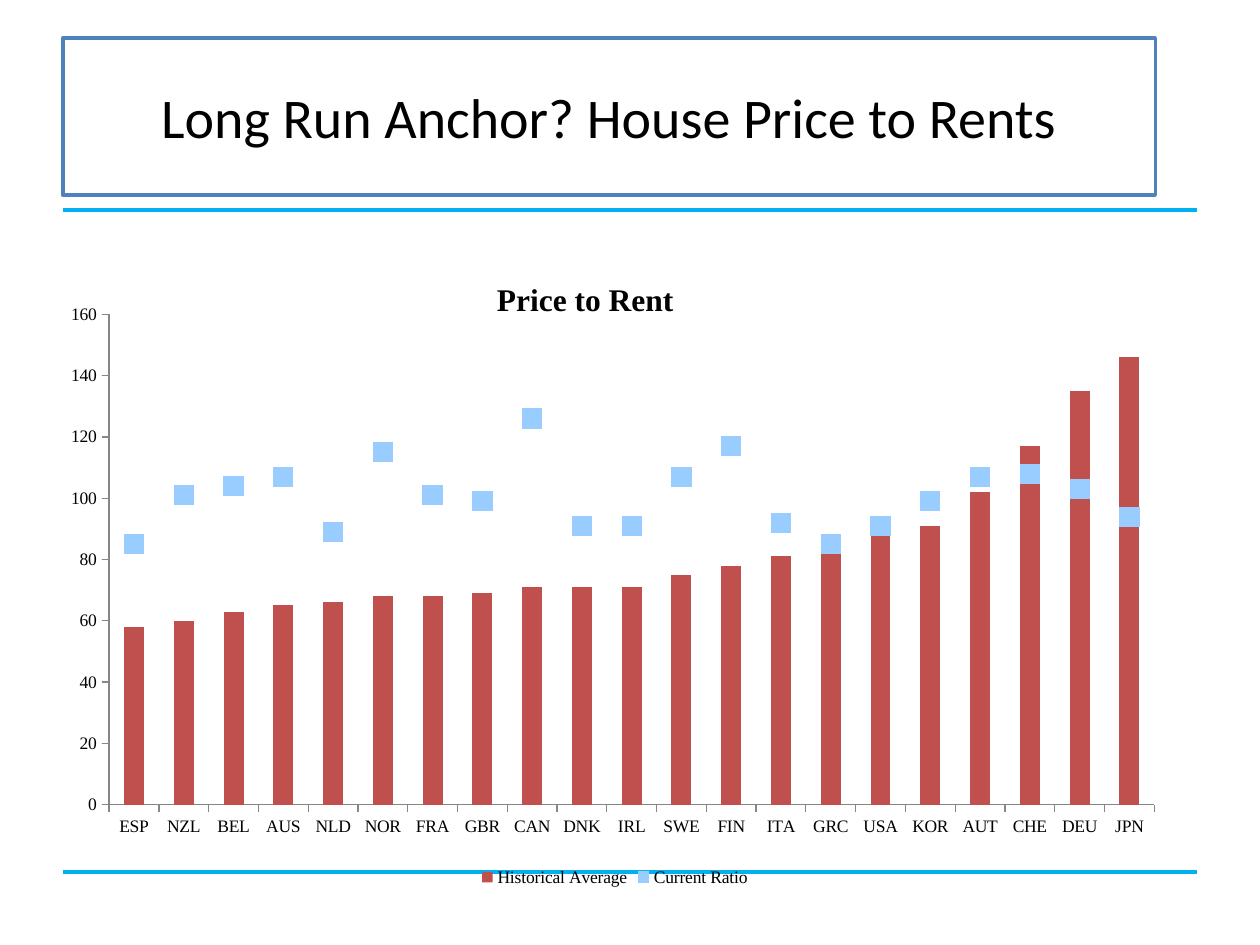
from dataclasses import dataclass

from pptx import Presentation
from pptx.chart.data import CategoryChartData
from pptx.dml.color import RGBColor
from pptx.enum.chart import XL_CHART_TYPE, XL_LEGEND_POSITION, XL_MARKER_STYLE, XL_TICK_MARK
from pptx.enum.shapes import MSO_CONNECTOR, MSO_SHAPE
from pptx.enum.text import MSO_ANCHOR, PP_ALIGN
from pptx.oxml import parse_xml
from pptx.oxml.ns import nsdecls, qn
from pptx.oxml.xmlchemy import OxmlElement
from pptx.util import Inches, Pt

COLUMNS = XL_CHART_TYPE.COLUMN_CLUSTERED
LEGEND_BOTTOM = XL_LEGEND_POSITION.BOTTOM
SQUARE = XL_MARKER_STYLE.SQUARE
TICK_OUTSIDE = XL_TICK_MARK.OUTSIDE
TICK_NONE = XL_TICK_MARK.NONE
STRAIGHT = MSO_CONNECTOR.STRAIGHT
RECTANGLE = MSO_SHAPE.RECTANGLE
MIDDLE = MSO_ANCHOR.MIDDLE
CENTER = PP_ALIGN.CENTER


@dataclass(frozen=True)
class Theme:
    text: RGBColor = RGBColor(0, 0, 0)
    paper: RGBColor = RGBColor(255, 255, 255)
    frame: RGBColor = RGBColor.from_string("4F81BD")
    rule: RGBColor = RGBColor.from_string("00B0F0")
    average: RGBColor = RGBColor.from_string("C0504D")
    current: RGBColor = RGBColor.from_string("99CCFF")
    axis: RGBColor = RGBColor.from_string("868686")
    heading_font: str = "Calibri"
    chart_font: str = "Times New Roman"
    heading_size: int = 32
    chart_title_size: int = 18
    label_size: int = 10


THEME = Theme()
COUNTRIES = ("ESP NZL BEL AUS NLD NOR FRA GBR CAN DNK IRL "
             "SWE FIN ITA GRC USA KOR AUT CHE DEU JPN").split()
HISTORICAL = (58, 60, 63, 65, 66, 68, 68, 69, 71, 71, 71,
              75, 78, 81, 87, 89, 91, 102, 117, 135, 146)
CURRENT = (85, 101, 104, 107, 89, 115, 101, 99, 126, 91, 91,
           107, 117, 92, 85, 91, 99, 107, 108, 103, 94)


def style_font(font, name, size, bold=False):
    font.name = name
    font.size = Pt(size)
    font.bold = bold
    font.color.rgb = THEME.text


def add_rule(page, left, top, width):
    rule = page.shapes.add_connector(
        STRAIGHT, Inches(left), Inches(top), Inches(left + width), Inches(top))
    rule.line.color.rgb = THEME.rule
    rule.line.width = Pt(2.25)
    rule._element.spPr.append(OxmlElement("a:effectLst"))


def add_heading(page, left, top, width, height):
    box = page.shapes.add_shape(
        RECTANGLE, Inches(left), Inches(top), Inches(width), Inches(height))
    box.shadow.inherit = False
    box.fill.solid()
    box.fill.fore_color.rgb = THEME.paper
    box.line.color.rgb = THEME.frame
    box.line.width = Pt(2)
    frame = box.text_frame
    frame.word_wrap = True
    frame.vertical_anchor = MIDDLE
    frame.text = "Long Run Anchor? House Price to Rents"
    para = frame.paragraphs[0]
    para.alignment = CENTER
    style_font(para.runs[0].font, THEME.heading_font, THEME.heading_size)


def set_layout(parent, index, **settings):
    for old in parent.findall(qn("c:layout")):
        parent.remove(old)
    items = "".join(f'<c:{name} val="{value}"/>' for name, value in settings.items())
    parent.insert(index, parse_xml(
        f'<c:layout {nsdecls("c")}><c:manualLayout>{items}</c:manualLayout></c:layout>'))


def move_last_series_to_line(chart):
    bars = chart.plots[0]._element
    series = bars.findall(qn("c:ser"))[-1]
    for flag in series.findall(qn("c:invertIfNegative")):
        series.remove(flag)
    lines = parse_xml(
        f'<c:lineChart {nsdecls("c")}><c:grouping val="standard"/>'
        '<c:varyColors val="0"/><c:marker val="1"/></c:lineChart>')
    lines.insert(2, series)
    for axis in bars.findall(qn("c:axId")):
        reference = OxmlElement("c:axId")
        reference.set("val", axis.get("val"))
        lines.append(reference)
    bars.addnext(lines)


def add_ratio_chart(page, left, top, width, height):
    data = CategoryChartData()
    data.categories = COUNTRIES
    data.add_series("Historical Average", HISTORICAL)
    data.add_series("Current Ratio", CURRENT)
    chart = page.shapes.add_chart(
        COLUMNS, Inches(left), Inches(top), Inches(width), Inches(height), data).chart
    style_font(chart.font, THEME.chart_font, THEME.label_size)
    move_last_series_to_line(chart)

    columns, points = chart.plots
    columns.gap_width = 150
    columns.vary_by_categories = False
    average = columns.series[0]
    average.invert_if_negative = False
    average.format.fill.solid()
    average.format.fill.fore_color.rgb = THEME.average
    current = points.series[0]
    current.smooth = False
    current.format.line.fill.background()
    current.marker.style = SQUARE
    current.marker.size = 11
    current.marker.format.fill.solid()
    current.marker.format.fill.fore_color.rgb = THEME.current
    current.marker.format.line.fill.background()

    for axis in (chart.category_axis, chart.value_axis):
        axis.has_major_gridlines = False
        axis.major_tick_mark = TICK_OUTSIDE
        axis.minor_tick_mark = TICK_NONE
        axis.format.line.color.rgb = THEME.axis
        style_font(axis.tick_labels.font, THEME.chart_font, THEME.label_size)
    chart.value_axis.minimum_scale = 0
    chart.value_axis.maximum_scale = 160
    chart.value_axis.major_unit = 20

    chart.has_title = True
    title = chart.chart_title
    title.text_frame.text = "Price to Rent"
    style_font(title.text_frame.paragraphs[0].runs[0].font,
               THEME.chart_font, THEME.chart_title_size, bold=True)
    for overlay in title._element.findall(qn("c:overlay")):
        overlay.set("val", "1")
    set_layout(title._element, 1, xMode="edge", yMode="edge", x=0.39, y=0.08)
    set_layout(chart._chartSpace.chart.plotArea, 0, layoutTarget="inner",
               xMode="edge", yMode="edge", x=0.05, y=0.14, w=0.93, h=0.73)

    chart.has_legend = True
    chart.legend.position = LEGEND_BOTTOM
    chart.legend.include_in_layout = False
    style_font(chart.legend.font, THEME.chart_font, THEME.label_size)


def main():
    deck = Presentation()
    deck.slide_width = Inches(10)
    deck.slide_height = Inches(7.5)
    page = deck.slides.add_slide(deck.slide_layouts[6])
    for top in (1.67, 6.92):
        add_rule(page, 0.5, top, 9)
    add_heading(page, 0.5, 0.3, 8.67, 1.25)
    add_ratio_chart(page, 0.42, 1.75, 8.92, 5.33)
    deck.save("out.pptx")


if __name__ == "__main__":
    main()
